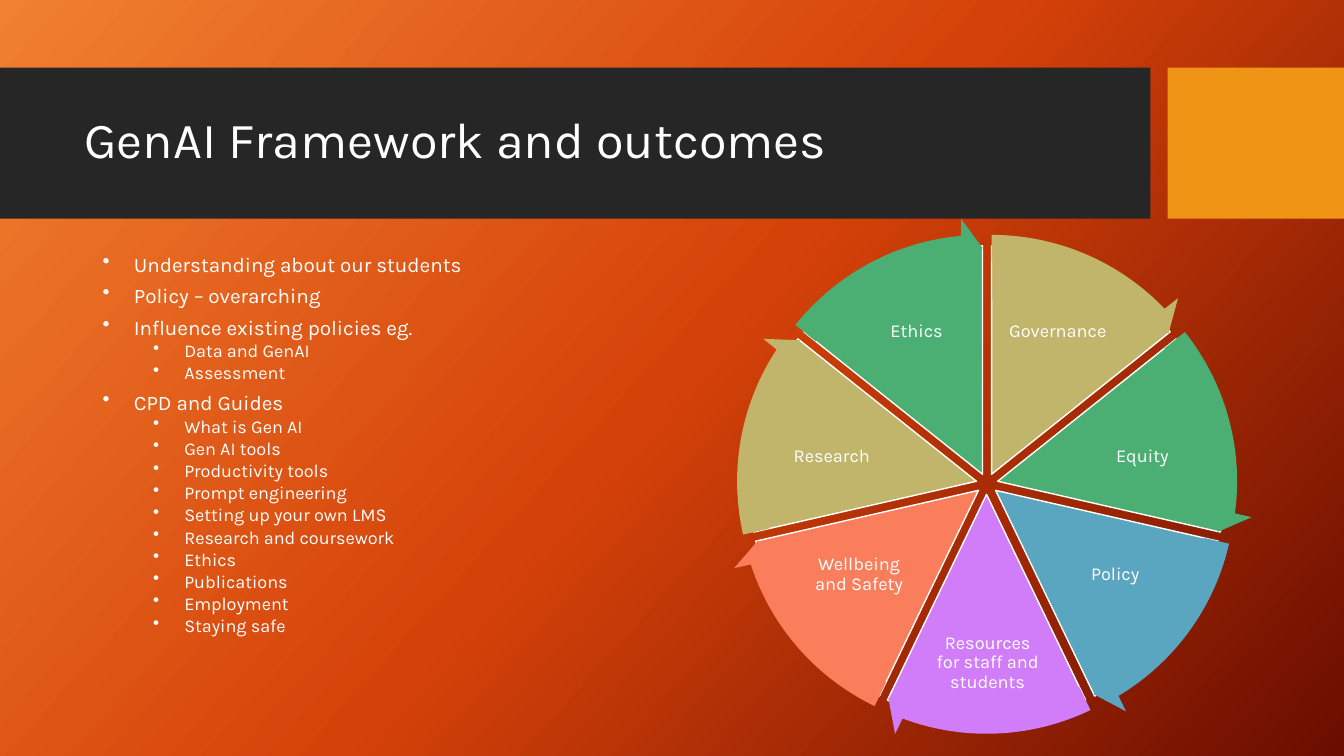
from copy import deepcopy
from dataclasses import dataclass
from math import cos, radians, sin

from pptx import Presentation
from pptx.dml.color import RGBColor
from pptx.enum.shapes import MSO_SHAPE
from pptx.enum.text import MSO_ANCHOR, PP_ALIGN
from pptx.oxml.ns import qn
from pptx.shapes.autoshape import Shape
from pptx.slide import Slide
from pptx.text.text import TextFrame, _Paragraph
from pptx.util import Emu, Pt

EMU_PER_PX = 9144  # 100 px to the inch
FONT = "Karla"
WHITE = "FFFFFF"
GRADIENT = [(0, "F18031"), (0.5, "D54209"), (1, "6A0D00")]

WHEEL_X, WHEEL_Y = 979, 480
WEDGE_OFFSET = 10.8
WEDGE_SIZE, ARROW_SIZE = 453, 509
ANGLE_UNIT = 0.6  # adjustment value of one degree
ARROWHEAD_ANGLE = 3.275


@dataclass(frozen=True)
class Box:
    left: int
    top: int
    width: int
    height: int


@dataclass(frozen=True)
class Sector:
    label: str
    color: str
    label_box: Box


@dataclass(frozen=True)
class Level:
    size: float
    indent: int
    space_before: int


SECTORS = [
    Sector("Governance", "C1B56B", Box(995, 286, 108, 86)),
    Sector("Equity", "4BAF73", Box(1071, 415, 124, 75)),
    Sector("Policy", "5AA6C0", Box(1052, 528, 108, 84)),
    Sector("Resources for staff and students", "D17DF9", Box(927, 620, 105, 75)),
    Sector("Wellbeing and Safety", "FA7E5C", Box(798, 528, 108, 84)),
    Sector("Research", "C1B56B", Box(763, 415, 124, 75)),
    Sector("Ethics", "4BAF73", Box(855, 286, 108, 86)),
]
SECTOR_ANGLE = 360 / len(SECTORS)

LEVELS = [Level(14.8, 31, 10), Level(12.9, 81, 5)]
OUTCOMES = [
    ("Understanding about our students", []),
    ("Policy – overarching", []),
    ("Influence existing policies eg.", ["Data and GenAI", "Assessment"]),
    ("CPD and Guides", [
        "What is Gen AI", "Gen AI tools", "Productivity tools",
        "Prompt engineering", "Setting up your own LMS",
        "Research and coursework", "Ethics", "Publications",
        "Employment", "Staying safe",
    ]),
]


def px(value: float) -> Emu:
    return Emu(round(value) * EMU_PER_PX)


def rgb(color: str) -> RGBColor:
    return RGBColor.from_string(color)


def edges(box: Box) -> tuple[Emu, Emu, Emu, Emu]:
    return px(box.left), px(box.top), px(box.width), px(box.height)


def paint_background(slide: Slide) -> None:
    fill = slide.background.fill
    fill.gradient()
    fill.gradient_angle = 360 - 42
    stop_list = next(slide.background._cSld.iter(qn("a:gsLst")))
    stop_list.insert(1, deepcopy(stop_list[0]))
    for stop, (position, color) in zip(fill.gradient_stops, GRADIENT):
        stop.position = position
        stop.color.rgb = rgb(color)


def add_filled(slide: Slide, kind: MSO_SHAPE, box: Box, color: str) -> Shape:
    shape = slide.shapes.add_shape(kind, *edges(box))
    shape.shadow.inherit = False
    shape.fill.solid()
    shape.fill.fore_color.rgb = rgb(color)
    shape.line.fill.background()
    return shape


def add_text_frame(slide: Slide, box: Box) -> TextFrame:
    frame = slide.shapes.add_textbox(*edges(box)).text_frame
    frame.word_wrap = True
    frame.vertical_anchor = MSO_ANCHOR.MIDDLE
    return frame


def add_text(paragraph: _Paragraph, text: str, size: float, spacing: float) -> None:
    paragraph.line_spacing = spacing
    run = paragraph.add_run()
    run.text = text
    run.font.name = FONT
    run.font.size = Pt(size)
    run.font.color.rgb = rgb(WHITE)


def add_outcomes(slide: Slide, box: Box) -> None:
    frame = add_text_frame(slide, box)
    items = [
        (depth, text)
        for heading, details in OUTCOMES
        for depth, text in [(0, heading), *((1, detail) for detail in details)]
    ]
    for index, (depth, text) in enumerate(items):
        level = LEVELS[depth]
        paragraph = frame.add_paragraph() if index else frame.paragraphs[0]
        properties = paragraph._p.get_or_add_pPr()
        properties.set("marL", str(px(level.indent)))
        properties.set("indent", str(px(-31)))
        bullet = properties.makeelement(qn("a:buChar"), {"char": "•"})
        properties.append(bullet)
        paragraph.level = depth
        if index:
            paragraph.space_before = Pt(level.space_before)
        add_text(paragraph, text, level.size, 0.7)


def sector_angles(index: int) -> tuple[float, float]:
    """Start and end of a sector in degrees, clockwise from three o'clock."""
    start = 270 + index * SECTOR_ANGLE
    return start % 360, (start + SECTOR_ANGLE) % 360


def sector_box(index: int, size: int) -> Box:
    """Square whose centre is pushed outward along the middle of the sector."""
    middle = radians(270 + (index + 0.5) * SECTOR_ANGLE)
    left = WHEEL_X + WEDGE_OFFSET * cos(middle) - size / 2
    top = WHEEL_Y + WEDGE_OFFSET * sin(middle) - size / 2
    return Box(round(left), round(top), size, size)


def add_wedge(slide: Slide, index: int, sector: Sector) -> None:
    box = sector_box(index, WEDGE_SIZE)
    wedge = add_filled(slide, MSO_SHAPE.PIE, box, sector.color)
    wedge.line.color.rgb = rgb(WHITE)
    wedge.line.width = Pt(1)
    for number, angle in enumerate(sector_angles(index)):
        wedge.adjustments[number] = angle * ANGLE_UNIT


def add_label(slide: Slide, sector: Sector) -> None:
    frame = add_text_frame(slide, sector.label_box)
    frame.margin_left = frame.margin_right = px(2)
    frame.margin_top = frame.margin_bottom = px(2)
    paragraph = frame.paragraphs[0]
    paragraph.alignment = PP_ALIGN.CENTER
    add_text(paragraph, sector.label, 13, 0.9)


def add_rim_arrow(slide: Slide, index: int, sector: Sector) -> None:
    box = sector_box(index, ARROW_SIZE)
    arrow = add_filled(slide, MSO_SHAPE.CIRCULAR_ARROW, box, sector.color)
    start, end = (angle * ANGLE_UNIT for angle in sector_angles(index))
    values = (0.051, ARROWHEAD_ANGLE, end - ARROWHEAD_ANGLE, start, 0.059)
    for number, value in enumerate(values):
        arrow.adjustments[number] = value


def main() -> None:
    presentation = Presentation()
    presentation.slide_width = px(1333)
    presentation.slide_height = px(750)
    slide = presentation.slides.add_slide(presentation.slide_layouts[6])
    paint_background(slide)
    add_filled(slide, MSO_SHAPE.RECTANGLE, Box(0, 67, 1141, 150), "262626")
    add_filled(slide, MSO_SHAPE.RECTANGLE, Box(1158, 67, 175, 150), "F09415")
    title = add_text_frame(slide, Box(74, 82, 1051, 118))
    add_text(title.paragraphs[0], "GenAI Framework and outcomes", 36, 0.9)
    add_outcomes(slide, Box(92, 235, 430, 417))
    for index, sector in enumerate(SECTORS):
        add_wedge(slide, index, sector)
        add_label(slide, sector)
    for index, sector in enumerate(SECTORS):
        add_rim_arrow(slide, index, sector)
    presentation.save("out.pptx")


if __name__ == "__main__":
    main()
